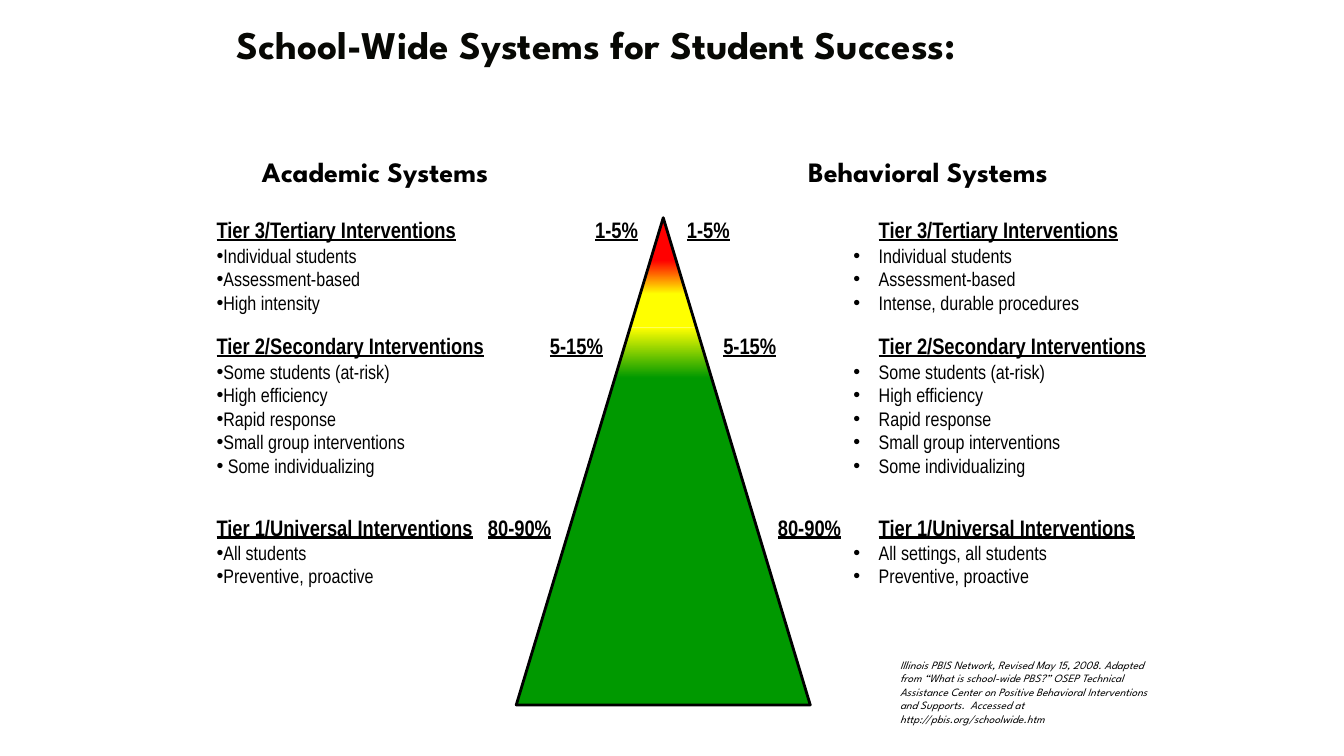
from lxml import etree
from pptx import Presentation
from pptx.dml.color import RGBColor
from pptx.enum.shapes import MSO_SHAPE
from pptx.enum.text import MSO_ANCHOR, PP_ALIGN
from pptx.oxml.ns import qn
from pptx.util import Pt

TRIANGLE = MSO_SHAPE.ISOSCELES_TRIANGLE
TOP = MSO_ANCHOR.TOP
LEFT = PP_ALIGN.LEFT

BLACK = RGBColor(0, 0, 0)
TITLE_BLACK = RGBColor(7, 8, 4)
RED = RGBColor(255, 0, 0)
YELLOW = RGBColor(255, 255, 0)
GREEN = RGBColor(0, 153, 0)

HEAD_FONT = "League Spartan"
LIST_FONT = "Arial Narrow"

LEFT_X, RIGHT_X = 147.6, 476.6
RIGHT_INDENT = 144
APEX_X, APEX_Y = 473.8, 155.5
BASE_Y, HALF_BASE = 503.5, 105

TIERS = [
    dict(y=151.2, name="Tier 3/Tertiary Interventions", share="1-5%",
         left_stop=301, right_stop=7,
         academic=["Individual students", "Assessment-based", "High intensity"],
         behavioral=["Individual students", "Assessment-based",
                     "Intense, durable procedures"]),
    dict(y=234, name="Tier 2/Secondary Interventions", share="5-15%",
         left_stop=276, right_stop=33,
         academic=["Some students (at-risk)", "High efficiency", "Rapid response",
                   "Small group interventions", " Some individualizing"],
         behavioral=["Some students (at-risk)", "High efficiency", "Rapid response",
                     "Small group interventions", "Some individualizing"]),
    dict(y=363.6, name="Tier 1/Universal Interventions", share="80-90%",
         left_stop=239, right_stop=72,
         academic=["All students", "Preventive, proactive"],
         behavioral=["All settings, all students", "Preventive, proactive"]),
]

SOURCE = ("Illinois PBIS Network, Revised May 15, 2008. Adapted from “What is "
          "school-wide PBS?” OSEP Technical Assistance Center on Positive Behavioral "
          "Interventions and Supports.  Accessed at http://pbis.org/schoolwide.htm")


def add_text(p, text, font=LIST_FONT, size=14, color=BLACK,
             bold=False, italic=False, underline=False):
    r = p.add_run()
    r.text = text
    f = r.font
    f.name, f.size, f.color.rgb = font, Pt(size), color
    f.bold, f.italic, f.underline = bold, italic, underline


def add_box(s, x, y, w, h, wrap=True):
    tf = s.shapes.add_textbox(Pt(x), Pt(y), Pt(w), Pt(h)).text_frame
    tf.word_wrap = wrap
    return tf


def set_tabs(p, stops):
    tabs = etree.SubElement(p._p.get_or_add_pPr(), qn("a:tabLst"))
    for pos, align in stops:
        etree.SubElement(tabs, qn("a:tab"), pos=str(Pt(pos)), algn=align)


def add_bullet(tf, text, indent, hang):
    p = tf.add_paragraph()
    pPr = p._p.get_or_add_pPr()
    pPr.set("marL", str(Pt(indent)))
    pPr.set("indent", str(Pt(-hang)))
    etree.SubElement(pPr, qn("a:buFont"), typeface="Arial")
    etree.SubElement(pPr, qn("a:buChar"), char="•")
    add_text(p, text)


def add_tier(s, x, y, w, parts, stops, items, indent=0, hang=0):
    tf = add_box(s, x, y, w, 26.5 + 17 * len(items))
    p = tf.paragraphs[0]
    set_tabs(p, stops)
    for text in parts:
        add_text(p, text, size=16, bold=True, underline=text != "\t")
    for item in items:
        add_bullet(tf, item, indent, hang)


def half_width(y):
    return HALF_BASE * (y - APEX_Y) / (BASE_Y - APEX_Y)


def add_triangle(group, bottom):
    half = half_width(bottom)
    sp = group.shapes.add_shape(TRIANGLE, Pt(APEX_X - half), Pt(APEX_Y),
                                Pt(2 * half), Pt(bottom - APEX_Y))
    sp.shadow.inherit = False
    return sp


def add_band(group, top, bottom, color, top_color=None):
    a, b = half_width(top), half_width(bottom)
    corners = [(APEX_X - b, bottom), (APEX_X - a, top),
               (APEX_X + a, top), (APEX_X + b, bottom)]
    points = [(Pt(x), Pt(y)) for x, y in corners]
    builder = group.shapes.build_freeform(*points[0])
    builder.add_line_segments(points[1:])
    sp = builder.convert_to_shape()
    sp.shadow.inherit = False
    sp.line.fill.background()
    if top_color is None:
        sp.fill.solid()
        sp.fill.fore_color.rgb = color
    else:
        sp.fill.gradient()
        sp.fill.gradient_angle = 90
        for stop, rgb in zip(sp.fill.gradient_stops, (color, top_color)):
            stop.color.rgb = rgb


def add_pyramid(s):
    group = s.shapes.add_group_shape()
    tip = add_triangle(group, 186)
    tip.fill.solid()
    tip.fill.fore_color.rgb = RED
    tip.line.fill.background()
    add_band(group, 264, BASE_Y, GREEN)
    add_band(group, 234, 270, GREEN, YELLOW)
    add_band(group, 210, 234, YELLOW)
    add_band(group, 186, 210, YELLOW, RED)
    outline = add_triangle(group, BASE_Y)
    outline.fill.background()
    outline.line.color.rgb = BLACK
    outline.line.width = Pt(2)


def add_title(s, text):
    sp = s.shapes.title
    sp.left, sp.top, sp.width, sp.height = Pt(162), Pt(12.2), Pt(648), Pt(72)
    tf = sp.text_frame
    tf.vertical_anchor = TOP
    tf.margin_top = Pt(6)
    p = tf.paragraphs[0]
    p.alignment = LEFT
    p.line_spacing = 0.9
    add_text(p, text, font=HEAD_FONT, size=28, color=TITLE_BLACK, bold=True)


def main():
    prs = Presentation()
    prs.slide_width, prs.slide_height = Pt(960), Pt(540)
    s = prs.slides.add_slide(prs.slide_layouts[5])
    add_title(s, "School-Wide Systems for Student Success:")

    for tier in TIERS:
        name, share, y = tier["name"], tier["share"], tier["y"]
        add_tier(s, LEFT_X, y, tier["left_stop"] + 18, [name, "\t", share],
                 [(tier["left_stop"], "r")], tier["academic"])
        add_tier(s, RIGHT_X, y, 360, ["\t", share, "\t", name],
                 [(tier["right_stop"], "l"), (RIGHT_INDENT, "l")],
                 tier["behavioral"], RIGHT_INDENT, 18)

    for x, text in ((180, "Academic Systems"), (570.2, "Behavioral Systems")):
        tf = add_box(s, x, 106.6, 200, 31, wrap=False)
        add_text(tf.paragraphs[0], text, font=HEAD_FONT, size=20, bold=True)

    add_pyramid(s)

    p = add_box(s, 635.8, 466.6, 192, 55.4).paragraphs[0]
    p.space_before = Pt(4)
    add_text(p, SOURCE, font=HEAD_FONT, size=8, italic=True)
    prs.save("out.pptx")


if __name__ == "__main__":
    main()
